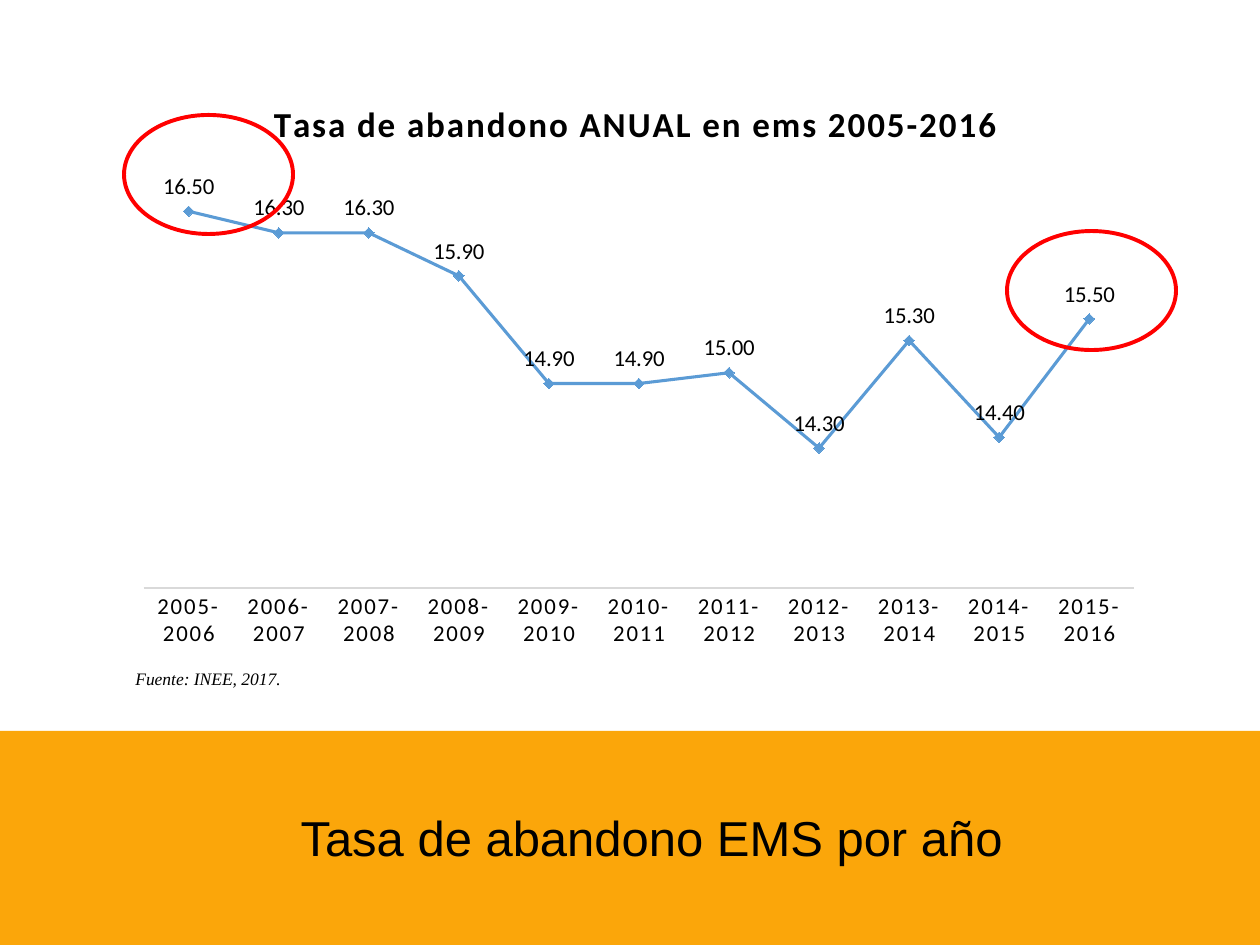
from lxml import etree
from pptx import Presentation
from pptx.chart.data import CategoryChartData
from pptx.dml.color import RGBColor
from pptx.enum.chart import XL_CHART_TYPE, XL_LABEL_POSITION, XL_MARKER_STYLE, XL_TICK_MARK
from pptx.enum.shapes import MSO_SHAPE
from pptx.enum.text import MSO_ANCHOR, PP_ALIGN
from pptx.oxml.ns import qn
from pptx.util import Emu, Pt

LINE_MARKERS = XL_CHART_TYPE.LINE_MARKERS
ABOVE = XL_LABEL_POSITION.ABOVE
DIAMOND = XL_MARKER_STYLE.DIAMOND
NO_TICK = XL_TICK_MARK.NONE
RECTANGLE = MSO_SHAPE.RECTANGLE
OVAL = MSO_SHAPE.OVAL
MIDDLE = MSO_ANCHOR.MIDDLE
CENTER = PP_ALIGN.CENTER

ORANGE = RGBColor(0xFB, 0xA6, 0x0A)
BLUE = RGBColor(0x5B, 0x9B, 0xD5)
RED = RGBColor(0xFF, 0x00, 0x00)
GRAY = RGBColor(0xD9, 0xD9, 0xD9)
BLACK = RGBColor(0x00, 0x00, 0x00)
WHITE = RGBColor(0xFF, 0xFF, 0xFF)

SCALE = 914400 / 126
RATES = [16.5, 16.3, 16.3, 15.9, 14.9, 14.9, 15, 14.3, 15.3, 14.4, 15.5]


def box(*lengths):
    return [Emu(round(length * SCALE)) for length in lengths]


def set_layout(parent, position, **values):
    for old_layout in parent.findall(qn("c:layout")):
        parent.remove(old_layout)
    layout = etree.Element(qn("c:layout"))
    parent.insert(position, layout)
    manual = etree.SubElement(layout, qn("c:manualLayout"))
    for name, value in values.items():
        etree.SubElement(manual, qn(f"c:{name}")).set("val", str(value))


presentation = Presentation()
presentation.slide_width, presentation.slide_height = box(1260, 945)
slide = presentation.slides.add_slide(presentation.slide_layouts[5])

background = slide.background.fill
background.solid()
background.fore_color.rgb = WHITE

band = slide.shapes.add_shape(RECTANGLE, *box(0, 731, 1260, 214))
band.shadow.inherit = False
band.fill.solid()
band.fill.fore_color.rgb = ORANGE
band.line.fill.background()

title = slide.shapes.title
band._element.addnext(title._element)
title.left, title.top, title.width, title.height = box(175, 801, 953, 72)
title.text_frame.vertical_anchor = MIDDLE
paragraph = title.text_frame.paragraphs[0]
paragraph.alignment = CENTER
run = paragraph.add_run()
run.text = "Tasa de abandono EMS por año"
run.font.name = "Arial"
run.font.size = Pt(28)
run.font.color.rgb = BLACK

source = slide.shapes.add_textbox(*box(123, 660, 908, 37))
source.text_frame.word_wrap = True
paragraph = source.text_frame.paragraphs[0]
paragraph.line_spacing = 1.1
run = paragraph.add_run()
run.text = "Fuente: INEE, 2017."
run.font.name = "Times New Roman"
run.font.size = Pt(10)
run.font.italic = True
run.font.color.rgb = BLACK

chart_data = CategoryChartData(number_format="0.00")
chart_data.categories = [f"{year}-{year + 1}" for year in range(2005, 2016)]
chart_data.add_series("Series 1", RATES)
chart = slide.shapes.add_chart(LINE_MARKERS, *box(123, 69, 1032, 590), chart_data).chart
chart.has_legend = False
chart.font.name = "Calibri"
chart.font.size = Pt(13)
chart.font.color.rgb = BLACK

chart_title = chart.chart_title
run = chart_title.text_frame.paragraphs[0].add_run()
run.text = "Tasa de abandono ANUAL en ems 2005-2016"
run.font.name = "Calibri"
run.font.size = Pt(20)
run.font.bold = True
run.font.color.rgb = BLACK
run.font._element.set("spc", "100")
set_layout(chart_title._element, 1, xMode="edge", yMode="edge", x=0.14, y=0.04)

plot = chart.plots[0]
plot.vary_by_categories = False
plot_area = plot._element.getparent()
set_layout(plot_area, 0, layoutTarget="inner", xMode="edge", yMode="edge",
           x=0.02, y=0.15, w=0.96, h=0.73)

category_axis = chart.category_axis
category_axis.major_tick_mark = NO_TICK
category_axis.format.line.color.rgb = GRAY
category_axis.format.line.width = Pt(0.75)
font = category_axis.tick_labels.font
font.name = "Calibri"
font.size = Pt(13)
font.color.rgb = BLACK
font._element.set("spc", "120")

value_axis = chart.value_axis
value_axis.minimum_scale = 13
value_axis.maximum_scale = 17
value_axis.has_major_gridlines = False
value_axis.visible = False

series = plot.series[0]
series.smooth = False
series.format.line.color.rgb = BLUE
series.format.line.width = Pt(1.75)
series.marker.style = DIAMOND
series.marker.size = 6
series.marker.format.fill.solid()
series.marker.format.fill.fore_color.rgb = BLUE
series.marker.format.line.color.rgb = BLUE

labels = series.data_labels
labels.show_value = True
labels.position = ABOVE
labels.number_format = "0.00"
labels.number_format_is_linked = False
labels.font.name = "Calibri"
labels.font.size = Pt(13)
labels.font.color.rgb = BLACK

for left, top in [(124, 115), (1007, 231)]:
    highlight = slide.shapes.add_shape(OVAL, *box(left, top, 169, 119))
    highlight.shadow.inherit = False
    highlight.fill.background()
    highlight.line.color.rgb = RED
    highlight.line.width = Pt(2.25)

presentation.save("out.pptx")
